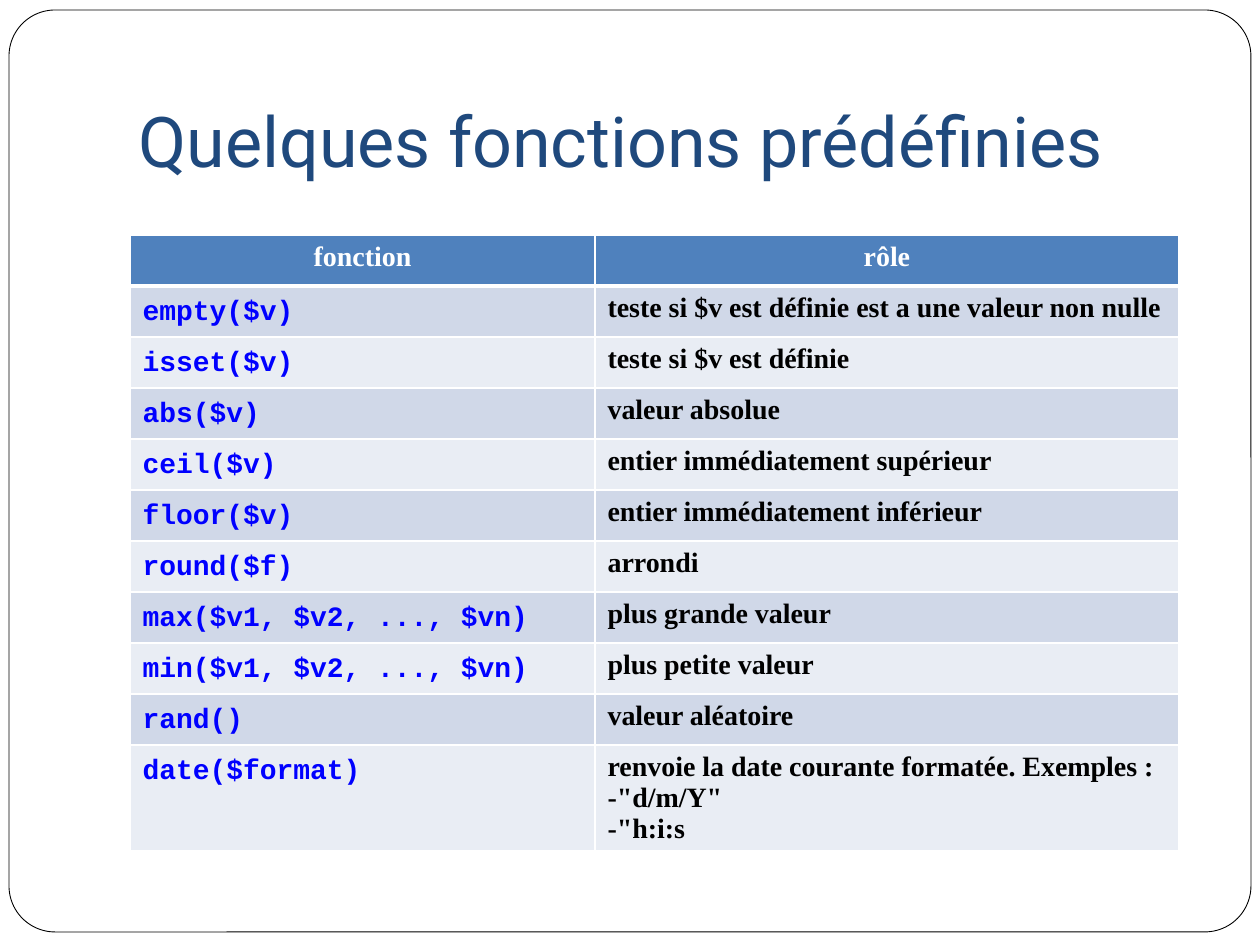
from dataclasses import dataclass

from lxml import etree
from pptx import Presentation
from pptx.dml.color import RGBColor
from pptx.enum.shapes import MSO_SHAPE
from pptx.enum.text import MSO_ANCHOR, MSO_AUTO_SIZE, PP_ALIGN
from pptx.oxml.ns import qn
from pptx.slide import Slide
from pptx.table import _Cell
from pptx.util import Emu, Pt

ROUNDED_RECTANGLE = MSO_SHAPE.ROUNDED_RECTANGLE
BOTTOM, TOP = MSO_ANCHOR.BOTTOM, MSO_ANCHOR.TOP
LEFT, CENTER = PP_ALIGN.LEFT, PP_ALIGN.CENTER
NO_AUTOFIT = MSO_AUTO_SIZE.NONE
TITLE_ONLY_LAYOUT = 5
PX_PER_INCH = 126


@dataclass(frozen=True)
class Theme:
    title_font: str = "Roboto"
    text_font: str = "Times New Roman"
    code_font: str = "Courier New"
    title_size: int = 40
    table_size: int = 16
    title: str = "1F497D"
    code: str = "0000FF"
    black: str = "000000"
    white: str = "FFFFFF"
    header: str = "4F81BD"
    bands: tuple[str, str] = ("D0D8E8", "E9EDF4")


@dataclass(frozen=True)
class Box:
    left: int
    top: int
    width: int
    height: int

    def emu(self) -> tuple[Emu, Emu, Emu, Emu]:
        return px(self.left), px(self.top), px(self.width), px(self.height)


@dataclass(frozen=True)
class TextStyle:
    font: str
    size: int
    color: str
    bold: bool = False
    align: PP_ALIGN = LEFT
    line_spacing: float = 1.0


@dataclass(frozen=True)
class FunctionRow:
    call: str
    role: str


THEME = Theme()
TITLE_STYLE = TextStyle(THEME.title_font, THEME.title_size, THEME.title)
HEADER_STYLE = TextStyle(THEME.text_font, THEME.table_size, THEME.white, True, CENTER)
CODE_STYLE = TextStyle(THEME.code_font, THEME.table_size, THEME.code, True, LEFT, 1.15)
ROLE_STYLE = TextStyle(THEME.text_font, THEME.table_size, THEME.black, True)

FRAME_BOX = Box(9, 10, 1242, 922)
TITLE_BOX = Box(126, 38, 1071, 157)
TABLE_BOX = Box(130, 235, 1049, 616)
COLUMN_WIDTHS = (465, 584)
ROW_HEIGHT = 51
THIN_BORDER, THICK_BORDER = 1, 3

HEADER = FunctionRow("fonction", "rôle")
FUNCTIONS = (
    FunctionRow("empty($v)", "teste si $v est définie est a une valeur non nulle"),
    FunctionRow("isset($v)", "teste si $v est définie"),
    FunctionRow("abs($v)", "valeur absolue"),
    FunctionRow("ceil($v)", "entier immédiatement supérieur"),
    FunctionRow("floor($v)", "entier immédiatement inférieur"),
    FunctionRow("round($f)", "arrondi"),
    FunctionRow("max($v1, $v2, ..., $vn)", "plus grande valeur"),
    FunctionRow("min($v1, $v2, ..., $vn)", "plus petite valeur"),
    FunctionRow("rand()", "valeur aléatoire"),
    FunctionRow(
        "date($format)",
        'renvoie la date courante formatée. Exemples :\n-"d/m/Y"\n-"h:i:s',
    ),
)


def px(length: int) -> Emu:
    return Emu(round(length * 914400 / PX_PER_INCH))


def rgb(color: str) -> RGBColor:
    return RGBColor.from_string(color)


def write_text(text_frame, text: str, style: TextStyle) -> None:
    text_frame.text = text
    for paragraph in text_frame.paragraphs:
        paragraph.alignment = style.align
        paragraph.line_spacing = style.line_spacing
        for run in paragraph.runs:
            run.font.name = style.font
            run.font.size = Pt(style.size)
            run.font.bold = style.bold
            run.font.color.rgb = rgb(style.color)


def set_borders(cell: _Cell, top: int, bottom: int) -> None:
    properties = cell._tc.get_or_add_tcPr()
    widths = {"lnL": THIN_BORDER, "lnR": THIN_BORDER, "lnT": top, "lnB": bottom}
    for side, width in widths.items():
        line = etree.SubElement(properties, qn(f"a:{side}"), w=str(Pt(width)))
        fill = etree.SubElement(line, qn("a:solidFill"))
        etree.SubElement(fill, qn("a:srgbClr"), val=THEME.white)


def draw_frame(slide: Slide) -> None:
    frame = slide.shapes.add_shape(ROUNDED_RECTANGLE, *FRAME_BOX.emu())
    frame.adjustments[0] = 0.05
    frame.shadow.inherit = False
    frame.fill.solid()
    frame.fill.fore_color.rgb = rgb(THEME.white)
    frame.line.color.rgb = rgb(THEME.black)
    frame.line.width = Pt(0.5)
    # Keep the frame behind the title
    slide.shapes.title._element.addprevious(frame._element)


def draw_title(slide: Slide, text: str) -> None:
    title = slide.shapes.title
    title.left, title.top, title.width, title.height = TITLE_BOX.emu()
    text_frame = title.text_frame
    text_frame.word_wrap = True
    text_frame.auto_size = NO_AUTOFIT
    text_frame.vertical_anchor = BOTTOM
    text_frame.margin_bottom = px(13)
    write_text(text_frame, text, TITLE_STYLE)


def fill_row(table, index: int, row: FunctionRow) -> None:
    is_header = index == 0
    color = THEME.header if is_header else THEME.bands[(index - 1) % 2]
    styles = (HEADER_STYLE, HEADER_STYLE) if is_header else (CODE_STYLE, ROLE_STYLE)
    top = THICK_BORDER if index == 1 else THIN_BORDER
    bottom = THICK_BORDER if is_header else THIN_BORDER
    for column, (text, style) in enumerate(zip((row.call, row.role), styles)):
        cell = table.cell(index, column)
        set_borders(cell, top, bottom)
        cell.fill.solid()
        cell.fill.fore_color.rgb = rgb(color)
        cell.vertical_anchor = TOP
        write_text(cell.text_frame, text, style)


def draw_table(slide: Slide) -> None:
    rows = (HEADER, *FUNCTIONS)
    table = slide.shapes.add_table(len(rows), len(COLUMN_WIDTHS), *TABLE_BOX.emu()).table
    table.horz_banding = False
    for column, width in zip(table.columns, COLUMN_WIDTHS):
        column.width = px(width)
    last = len(rows) - 1
    for index, row in enumerate(rows):
        height = TABLE_BOX.height - last * ROW_HEIGHT if index == last else ROW_HEIGHT
        table.rows[index].height = px(height)
        fill_row(table, index, row)


def main() -> None:
    presentation = Presentation()
    presentation.slide_width, presentation.slide_height = px(1260), px(945)
    layout = presentation.slide_layouts[TITLE_ONLY_LAYOUT]
    slide = presentation.slides.add_slide(layout)

    # Background frame, title, then the table of functions
    draw_frame(slide)
    draw_title(slide, "Quelques fonctions prédéfinies")
    draw_table(slide)
    presentation.save("out.pptx")


if __name__ == "__main__":
    main()
